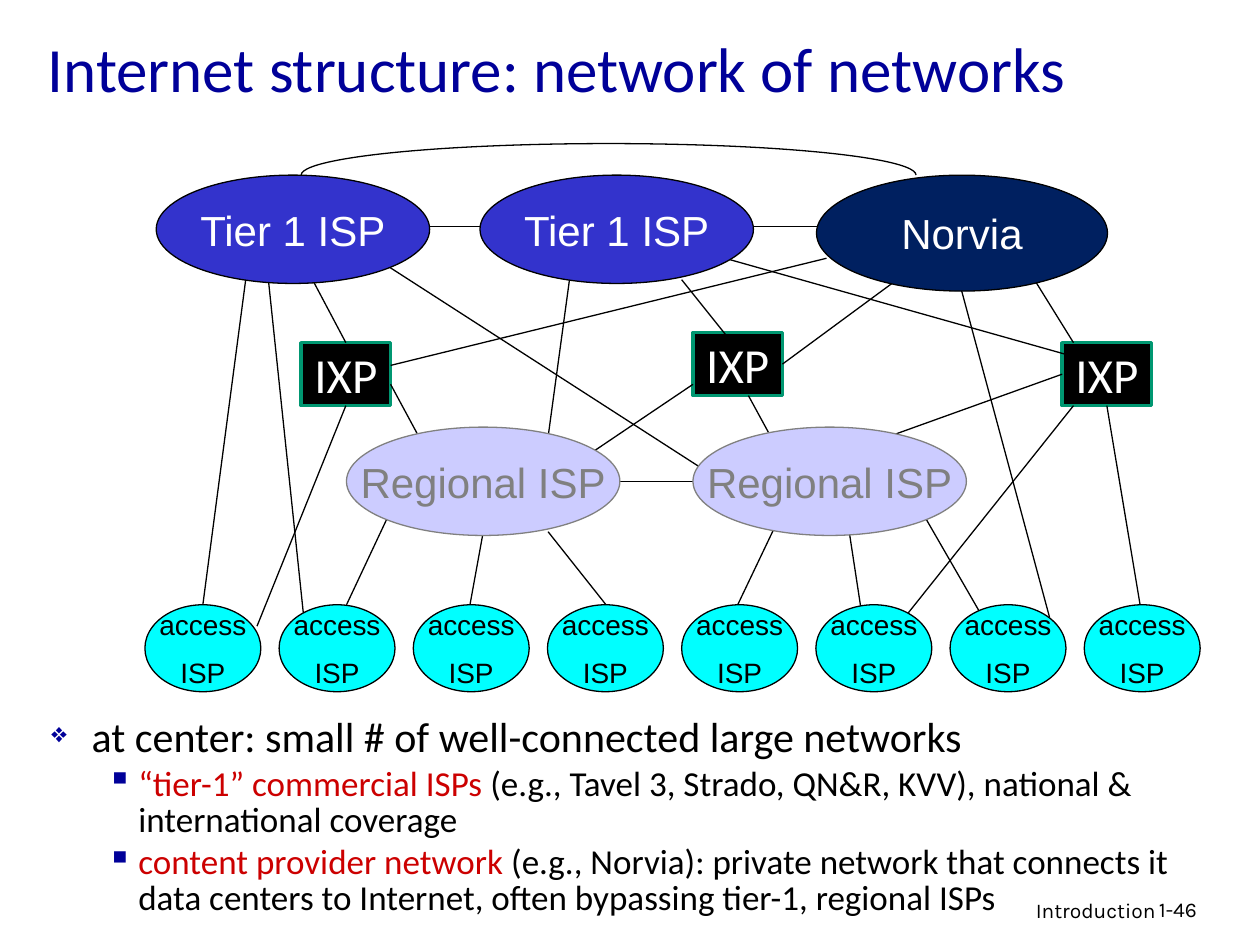
from lxml.etree import SubElement
from pptx import Presentation
from pptx.dml.color import RGBColor
from pptx.enum.shapes import MSO_CONNECTOR, MSO_SHAPE
from pptx.enum.text import MSO_ANCHOR, PP_ALIGN
from pptx.oxml.ns import qn
from pptx.util import Inches, Pt

BLACK = RGBColor(0, 0, 0)
WHITE = RGBColor(255, 255, 255)
NAVY = RGBColor(0, 0, 0x99)
RED = RGBColor(0xCC, 0, 0)
GREEN = RGBColor(0, 0x97, 0x71)
TIER_BLUE = RGBColor(0x33, 0x33, 0xCC)
PROVIDER_BLUE = RGBColor(0, 0x20, 0x60)
LAVENDER = RGBColor(0xCC, 0xCC, 0xFF)
GRAY = RGBColor(0x80, 0x80, 0x80)
CYAN = RGBColor(0, 255, 255)

TITLE = "Internet structure: network of networks"
# level, runs of (text, colour)
BULLETS = [
    (0, [("at center: small # of well-connected large networks", BLACK)]),
    (1, [("“tier-1” commercial ISPs ", RED),
         ("(e.g., Tavel 3, Strado, QN&R, KVV), national & international coverage", BLACK)]),
    (1, [("content provider network ", RED),
         ("(e.g., Norvia): private network that connects it data centers to Internet, "
          "often bypassing tier-1, regional ISPs", BLACK)]),
]
# size, indent, hanging, bullet character, bullet size in percent
LEVELS = [(24, 0.38, 0.32, "❖", 65), (20, 0.75, 0.25, "▪", 100)]

IXP_SIZE = (0.71, 0.5)
IXPS = {"west": (2.39, 2.72), "middle": (5.5, 2.64), "east": (8.43, 2.72)}
TOP, LEFT, BOTTOM, RIGHT = range(4)

# label, left, top, width, height, fill, line, text colour
NETWORKS = [
    ("Tier 1 ISP", 1.24, 1.39, 2.17, 0.86, TIER_BLUE, BLACK, WHITE),
    ("Tier 1 ISP", 3.81, 1.39, 2.17, 0.86, TIER_BLUE, BLACK, WHITE),
    ("Norvia", 6.48, 1.39, 2.31, 0.92, PROVIDER_BLUE, BLACK, WHITE),
    ("Regional ISP", 2.75, 3.39, 2.17, 0.86, LAVENDER, GRAY, GRAY),
    ("Regional ISP", 5.5, 3.39, 2.17, 0.86, LAVENDER, GRAY, GRAY),
]
ACCESS_COUNT, ACCESS_LEFT, ACCESS_PITCH = 8, 1.15, 1.065

# each end is a point, or an IXP and the side it joins
LINKS = [
    # tier 1, regional and provider networks to each other
    ((3.95, 1.8), (3.37, 1.8)), ((6.52, 1.8), (5.94, 1.8)), ((5.5, 3.82), (4.92, 3.82)),
    ((4.52, 2.22), (4.35, 3.47)), ((3.09, 2.12), (5.59, 3.73)),
    # networks to access ISPs
    ((1.95, 2.22), (1.61, 4.8)), ((2.13, 2.22), (2.41, 4.89)), ((3.07, 4.12), (2.75, 4.8)),
    ((3.83, 4.25), (3.73, 4.8)), ((4.35, 4.22), (4.81, 4.8)), ((6.17, 4.14), (5.85, 4.81)),
    ((6.74, 4.22), (6.83, 4.81)), ((7.35, 4.12), (7.8, 4.9)), ((7.63, 2.3), (8.33, 4.9)),
    # west IXP
    ((2.48, 2.22), ("west", TOP)), (("west", BOTTOM), (2.04, 4.97)),
    ((3.1, 3.05), (3.37, 3.55)), ((6.56, 2.05), (3.1, 2.9)),
    # middle IXP
    ((5.41, 2.22), (5.85, 2.77)), ((5.94, 3.14), (6.12, 3.47)),
    ((5.5, 3.05), (4.61, 3.65)), ((7.12, 2.22), ("middle", RIGHT)),
    # east IXP
    ((8.16, 2.14), (8.52, 2.72)), ((5.79, 2.06), (8.45, 2.81)),
    (("east", LEFT), (7.01, 3.48)), ((8.52, 3.22), (7.18, 4.9)), (("east", BOTTOM), (9.05, 4.81)),
]


def space_before(paragraph, percent):
    """Set the space before as a percentage of the line."""
    paragraph.space_before = Pt(0)
    spacing = paragraph._p.pPr.find(qn("a:spcBef"))
    spacing.remove(spacing[0])
    SubElement(spacing, qn("a:spcPct"), val=str(percent * 1000))


def set_font(font, name, size, color):
    font.name, font.size = name, Pt(size)
    font.color.rgb = color


def add_text(slide, text, box, font, size, color, align=PP_ALIGN.LEFT, anchor=MSO_ANCHOR.TOP):
    frame = slide.shapes.add_textbox(*map(Inches, box)).text_frame
    frame.word_wrap, frame.vertical_anchor = True, anchor
    paragraph = frame.paragraphs[0]
    paragraph.text, paragraph.alignment = text, align
    set_font(paragraph.font, font, size, color)


def add_node(slide, kind, box, text, fill, line, line_width, font, size, color):
    node = slide.shapes.add_shape(kind, *map(Inches, box))
    node.shadow.inherit = False
    node.fill.solid()
    node.fill.fore_color.rgb = fill
    node.line.color.rgb, node.line.width = line, Pt(line_width)
    frame = node.text_frame
    frame.text, frame.vertical_anchor = text, MSO_ANCHOR.MIDDLE
    frame.word_wrap = kind == MSO_SHAPE.RECTANGLE
    for paragraph in frame.paragraphs:
        paragraph.alignment = PP_ALIGN.CENTER
        space_before(paragraph, 50)
        set_font(paragraph.font, font, size, color)
    return node


def end_point(end):
    """Return the coordinates of a link's end."""
    if end[0] not in IXPS:
        return end
    left, top = IXPS[end[0]]
    width, height = IXP_SIZE
    dx, dy = [(0.5, 0), (0, 0.5), (0.5, 1), (1, 0.5)][end[1]]
    return left + dx * width, top + dy * height


def add_link(slide, start, end, ixps):
    link = slide.shapes.add_connector(
        MSO_CONNECTOR.STRAIGHT, *map(Inches, (*end_point(start), *end_point(end))))
    link.line.color.rgb, link.line.width = BLACK, Pt(0.75)
    SubElement(link._element.spPr, qn("a:effectLst"))
    if start[0] in ixps:
        link.begin_connect(ixps[start[0]], start[1])
    if end[0] in ixps:
        link.end_connect(ixps[end[0]], end[1])


def add_bullets(slide):
    frame = slide.shapes.add_textbox(*map(Inches, (0.25, 5.65, 9.23, 2))).text_frame
    frame.word_wrap = True
    for index, (level, runs) in enumerate(BULLETS):
        size, indent, hanging, bullet, bullet_size = LEVELS[level]
        paragraph = frame.paragraphs[0] if index == 0 else frame.add_paragraph()
        paragraph.level, paragraph.line_spacing = level, 0.85
        space_before(paragraph, 20)
        paragraph.font.name, paragraph.font.size = "Calibri", Pt(size)
        for text, color in runs:
            run = paragraph.add_run()
            run.text = text
            run.font.color.rgb = color
        properties = paragraph._p.pPr
        properties.set("marL", str(Inches(indent)))
        properties.set("indent", str(-Inches(hanging)))
        marks = [SubElement(properties, qn("a:buClr")),
                 SubElement(properties, qn("a:buSzPct"), val=str(bullet_size * 1000)),
                 SubElement(properties, qn("a:buChar"), char=bullet)]
        SubElement(marks[0], qn("a:srgbClr"), val=str(NAVY))
        defaults = properties.find(qn("a:defRPr"))
        for mark in marks:
            defaults.addprevious(mark)


def main():
    deck = Presentation()
    deck.slide_width, deck.slide_height = Inches(10), Inches(7.5)
    slide = deck.slides.add_slide(deck.slide_layouts[6])

    add_text(slide, "Introduction", (6.1, 7.07, 3.17, 0.31), "Karla", 12, BLACK, PP_ALIGN.RIGHT)
    add_text(slide, TITLE, (0.28, 0.18, 8.85, 0.71), "Calibri", 36, NAVY, anchor=MSO_ANCHOR.MIDDLE)
    add_bullets(slide)
    add_text(slide, "1-46", (9.1, 7.07, 0.74, 0.3), "Karla", 12, BLACK)

    ixps = {place: add_node(slide, MSO_SHAPE.RECTANGLE, (*corner, *IXP_SIZE), "IXP",
                            BLACK, GREEN, 2, "Calibri", 28, WHITE)
            for place, corner in IXPS.items()}
    for start, end in LINKS:
        add_link(slide, start, end, ixps)

    arc = slide.shapes.add_shape(MSO_SHAPE.ARC, *map(Inches, (2.39, 1.14, 4.88, 0.5)))
    arc.adjustments[0], arc.adjustments[1] = 106.82, 0
    arc.shadow.inherit = False
    arc.fill.background()
    arc.line.color.rgb, arc.line.width = BLACK, Pt(0.75)

    for label, left, top, width, height, fill, line, color in NETWORKS:
        add_node(slide, MSO_SHAPE.OVAL, (left, top, width, height), label,
                 fill, line, 0.75, "Arial", 24, color)
    for index in range(ACCESS_COUNT):
        add_node(slide, MSO_SHAPE.OVAL, (ACCESS_LEFT + index * ACCESS_PITCH, 4.8, 0.92, 0.69),
                 "access\nISP", CYAN, BLACK, 0.75, "Arial", 16, BLACK)
    deck.save("out.pptx")


if __name__ == "__main__":
    main()
